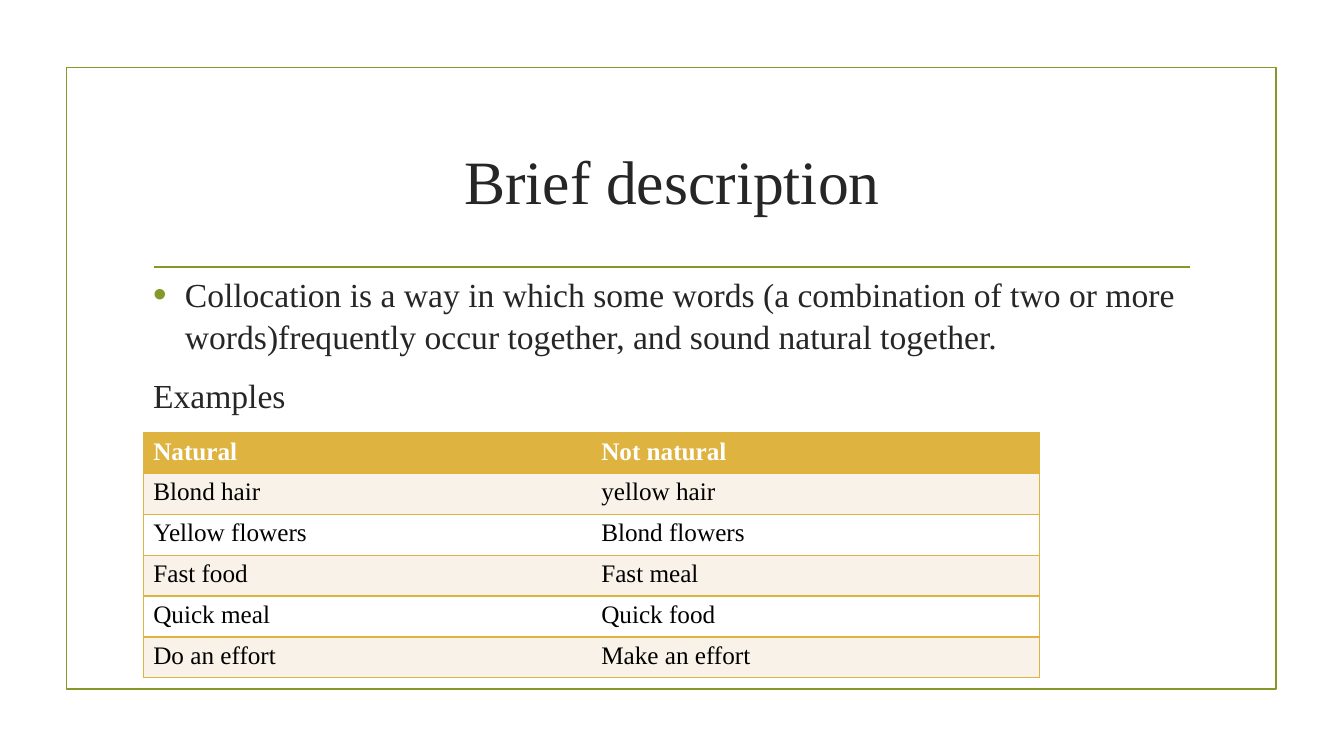
from lxml.etree import SubElement
from pptx import Presentation
from pptx.dml.color import RGBColor
from pptx.enum.shapes import MSO_CONNECTOR as Conn, MSO_SHAPE as Shape
from pptx.enum.text import MSO_ANCHOR as Anchor, PP_ALIGN as Align
from pptx.oxml.ns import qn
from pptx.util import Cm, Pt

FONT = "Times New Roman"
COLORS = {
    "green": "83992A",
    "gold": "DEB340",
    "cream": "F9F2E8",
    "white": "FFFFFF",
    "black": "000000",
    "text": "262626",
}
ROWS = [
    ("Natural", "Not natural"),
    ("Blond hair", "yellow hair"),
    ("Yellow flowers", "Blond flowers"),
    ("Fast food", "Fast meal"),
    ("Quick meal", "Quick food"),
    ("Do an effort", "Make an effort"),
]


def rgb(name):
    return RGBColor.from_string(COLORS[name])


def add_run(p, text, size, color="text", bold=False):
    r = p.add_run()
    r.text = text
    r.font.name = FONT
    r.font.size = Pt(size)
    r.font.bold = bold
    r.font.color.rgb = rgb(color)


def add_text_frame(s, x, y, w, h):
    tf = s.shapes.add_textbox(Cm(x), Cm(y), Cm(w), Cm(h)).text_frame
    tf.word_wrap = True
    return tf


def add_bullet(p, indent):
    pPr = p._p.get_or_add_pPr()
    pPr.set("marL", str(Cm(indent)))
    pPr.set("indent", str(-Cm(indent)))
    color = SubElement(pPr, qn("a:buClr"))
    SubElement(color, qn("a:srgbClr"), val=COLORS["green"])
    SubElement(pPr, qn("a:buSzPct"), val="115000")
    SubElement(pPr, qn("a:buFont"), typeface="Arial")
    SubElement(pPr, qn("a:buChar"), char="•")


def set_border(cell, side, color):
    ln = SubElement(cell._tc.get_or_add_tcPr(), qn(f"a:ln{side}"), w=str(Pt(1)))
    if color:
        fill = SubElement(ln, qn("a:solidFill"))
        SubElement(fill, qn("a:srgbClr"), val=COLORS[color])
    else:
        SubElement(ln, qn("a:noFill"))


def add_frame(s, x, y, w, h):
    sp = s.shapes.add_shape(Shape.RECTANGLE, Cm(x), Cm(y), Cm(w), Cm(h))
    sp.shadow.inherit = False
    sp.fill.background()
    sp.line.color.rgb = rgb("green")
    sp.line.width = Pt(1.25)


def add_title(s, x, y, w, h):
    tf = add_text_frame(s, x, y, w, h)
    tf.vertical_anchor = Anchor.MIDDLE
    p = tf.paragraphs[0]
    p.alignment = Align.CENTER
    add_run(p, "Brief description", 44)

    # Rule below the title
    inset, rule_y = 0.28, y + h + 0.38
    rule = s.shapes.add_connector(
        Conn.STRAIGHT, Cm(x + inset), Cm(rule_y), Cm(x + w - inset), Cm(rule_y))
    rule.line.color.rgb = rgb("green")
    rule.line.width = Pt(1.25)
    SubElement(rule._element.spPr, qn("a:effectLst"))


def add_body(s, x, y, w, h):
    tf = add_text_frame(s, x, y, w, h)
    definition = tf.paragraphs[0]
    examples = tf.add_paragraph()
    examples.space_before = Pt(5)
    for p in (definition, examples):
        p.line_spacing = 1.06
        p.space_after = Pt(6)
    add_bullet(definition, 0.8)
    add_run(definition, "Collocation is a way in which some words (a combination of "
            "two or more words)frequently occur together, and sound natural together.", 24)
    add_run(examples, "Examples", 24)


def add_examples(s, x, y, w, h):
    n_rows, n_cols = len(ROWS), len(ROWS[0])
    table = s.shapes.add_table(n_rows, n_cols, Cm(x), Cm(y), Cm(w), Cm(h)).table
    table.horz_banding = False
    for i, row in enumerate(ROWS):
        table.rows[i].height = Cm(h / n_rows)
        header = i == 0
        fill = "gold" if header else ("white", "cream")[i % 2]
        for j, text in enumerate(row):
            cell = table.cell(i, j)
            # Gold lines everywhere except between the columns
            set_border(cell, "L", "gold" if j == 0 else None)
            set_border(cell, "R", "gold" if j == n_cols - 1 else None)
            set_border(cell, "T", "gold")
            set_border(cell, "B", "gold")
            cell.fill.solid()
            cell.fill.fore_color.rgb = rgb(fill)
            add_run(cell.text_frame.paragraphs[0], text, 18,
                    "white" if header else "black", header)


def main():
    prs = Presentation()
    prs.slide_width, prs.slide_height = Cm(33.87), Cm(19.05)
    s = prs.slides.add_slide(prs.slide_layouts[6])
    add_frame(s, 1.68, 1.7, 30.48, 15.67)
    add_title(s, 3.61, 2.72, 26.67, 3.63)
    add_body(s, 3.61, 6.71, 26.67, 10.77)
    add_examples(s, 3.61, 10.9, 22.58, 6.18)
    prs.save("out.pptx")


if __name__ == "__main__":
    main()
